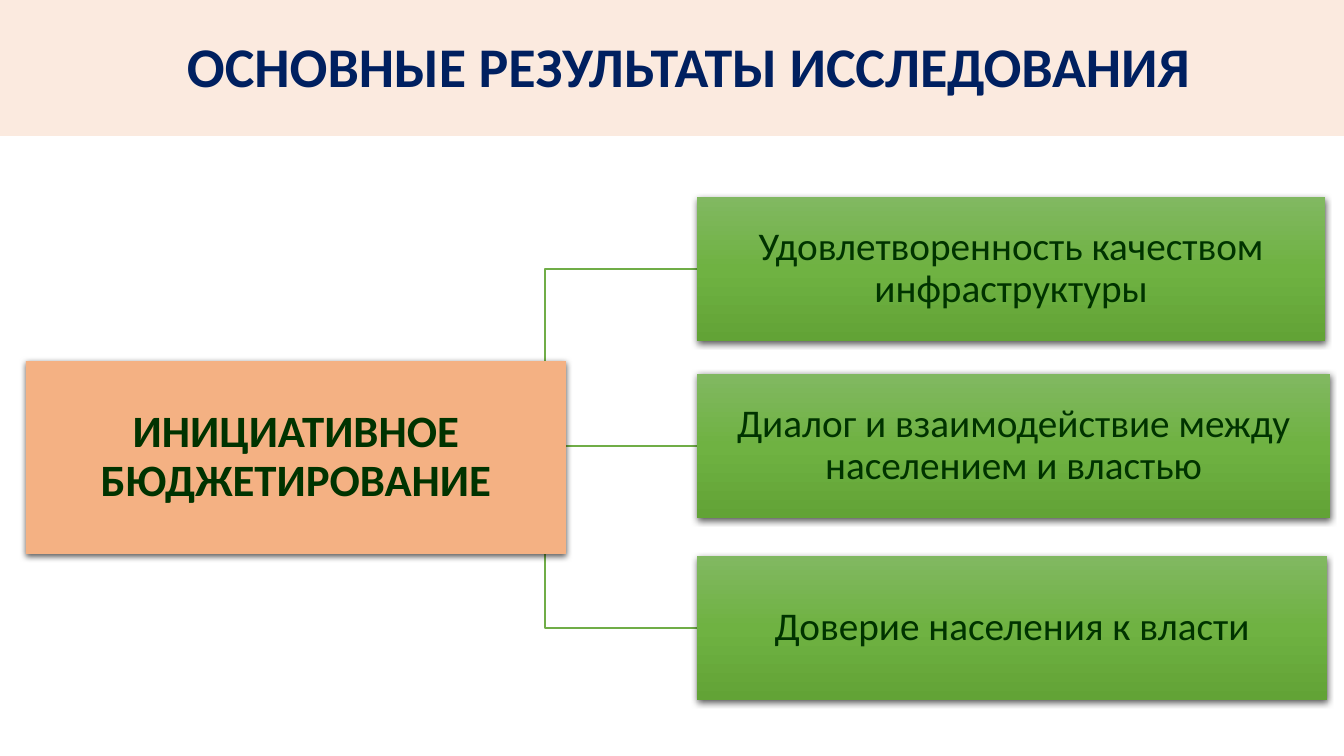
from lxml import etree
from pptx import Presentation
from pptx.dml.color import RGBColor
from pptx.enum.shapes import MSO_SHAPE
from pptx.enum.text import MSO_ANCHOR, PP_ALIGN
from pptx.oxml import parse_xml
from pptx.oxml.ns import qn
from pptx.util import Emu, Pt

RECT = MSO_SHAPE.RECTANGLE
MIDDLE = MSO_ANCHOR.MIDDLE
CENTER = PP_ALIGN.CENTER
SCALE = 12192000 / 1344
NS = 'xmlns:a="http://schemas.openxmlformats.org/drawingml/2006/main"'

COLORS = {
    "band": "FBE5D6", "title": "002060", "root": "F4B183", "text": "003300",
    "line": "70AD47", "top": "81B861", "mid": "6FB242", "low": "62A336",
    "shade": "000000",
}
ROOT = (26, 361, 540, 193)
START, BEND, LEFT, HIGH = (393, 458), 545, 697, 144
RESULTS = [
    ("Удовлетворенность качеством инфраструктуры", 197, 628),
    ("Диалог и взаимодействие между населением и властью", 374, 633),
    ("Доверие населения к власти", 556, 630),
]


def px(n):
    return Emu(round(n * SCALE))


def color(name):
    return RGBColor.from_string(COLORS[name])


def paint(shape, name):
    shape.fill.solid()
    shape.fill.fore_color.rgb = color(name)


def add_rect(slide, box):
    rect = slide.shapes.add_shape(RECT, *map(px, box))
    rect.shadow.inherit = False
    rect.line.fill.background()
    return rect


def add_band(slide):
    band = add_rect(slide, (0, 0, 1344, 136))
    paint(band, "band")
    tint = band.fill._xPr.find(".//" + qn("a:srgbClr"))
    etree.SubElement(tint, qn("a:alpha"), val="78000")


def add_shade(shape):
    """Fill the empty effect list with a soft shadow below the shape."""
    effects = shape._element.spPr.find(qn("a:effectLst"))
    effects.append(parse_xml(
        f'<a:outerShdw {NS} blurRad="57150" dist="19050" dir="5400000" algn="ctr" '
        f'rotWithShape="0"><a:srgbClr val="{COLORS["shade"]}">'
        '<a:alpha val="63000"/></a:srgbClr></a:outerShdw>'))


def blend(shape):
    """Give the shape a vertical gradient of three greens."""
    shape.fill.gradient()
    shape.fill.gradient_angle = 270
    stops = shape._element.spPr.find(".//" + qn("a:gsLst"))
    for stop in list(stops):
        stops.remove(stop)
    for i, name in enumerate(("top", "mid", "low")):
        stops.append(parse_xml(
            f'<a:gs {NS} pos="{i * 50000}"><a:srgbClr val="{COLORS[name]}"/></a:gs>'))


def set_text(shape, text, size, bold, name, inset):
    frame = shape.text_frame
    style = {"word_wrap": True, "vertical_anchor": MIDDLE}
    for side in ("left", "top", "right", "bottom"):
        style["margin_" + side] = px(inset)
    para = frame.paragraphs[0]
    run = para.add_run()
    run.text = text
    run.font.color.rgb = color(name)
    for item, values in (
        (frame, style),
        (para, {"alignment": CENTER, "line_spacing": 0.9}),
        (run.font, {"name": "Calibri", "size": Pt(size), "bold": bold}),
    ):
        for key, value in values.items():
            setattr(item, key, value)


def add_link(slide, end):
    """Draw a bent line from the root to the left side of a result."""
    x, y = START
    form = slide.shapes.build_freeform(x, y, scale=SCALE)
    form.add_line_segments([(BEND, y), (BEND, end), (LEFT, end)], close=False)
    link = form.convert_to_shape()
    link.shadow.inherit = False
    link.fill.background()
    link.line.color.rgb = color("line")
    link.line.width = Pt(1)


def add_root(slide):
    root = add_rect(slide, ROOT)
    paint(root, "root")
    add_shade(root)
    set_text(root, "ИНИЦИАТИВНОЕ БЮДЖЕТИРОВАНИЕ", 32, True, "text", 2)


def add_result(slide, text, top, width):
    box = add_rect(slide, (LEFT, top, width, HIGH))
    blend(box)
    add_shade(box)
    set_text(box, text, 28, False, "text", 2)


def add_title(slide):
    title = slide.shapes.add_textbox(*map(px, (21, 23, 1335, 92)))
    set_text(title, "ОСНОВНЫЕ РЕЗУЛЬТАТЫ ИССЛЕДОВАНИЯ", 40, True, "title", 5)


def main():
    deck = Presentation()
    deck.slide_width, deck.slide_height = px(1344), px(756)
    slide = deck.slides.add_slide(deck.slide_layouts[6])
    add_band(slide)
    for _, top, _ in RESULTS:
        add_link(slide, top + HIGH // 2)
    add_root(slide)
    for result in RESULTS:
        add_result(slide, *result)
    add_title(slide)
    deck.save("out.pptx")


if __name__ == "__main__":
    main()
